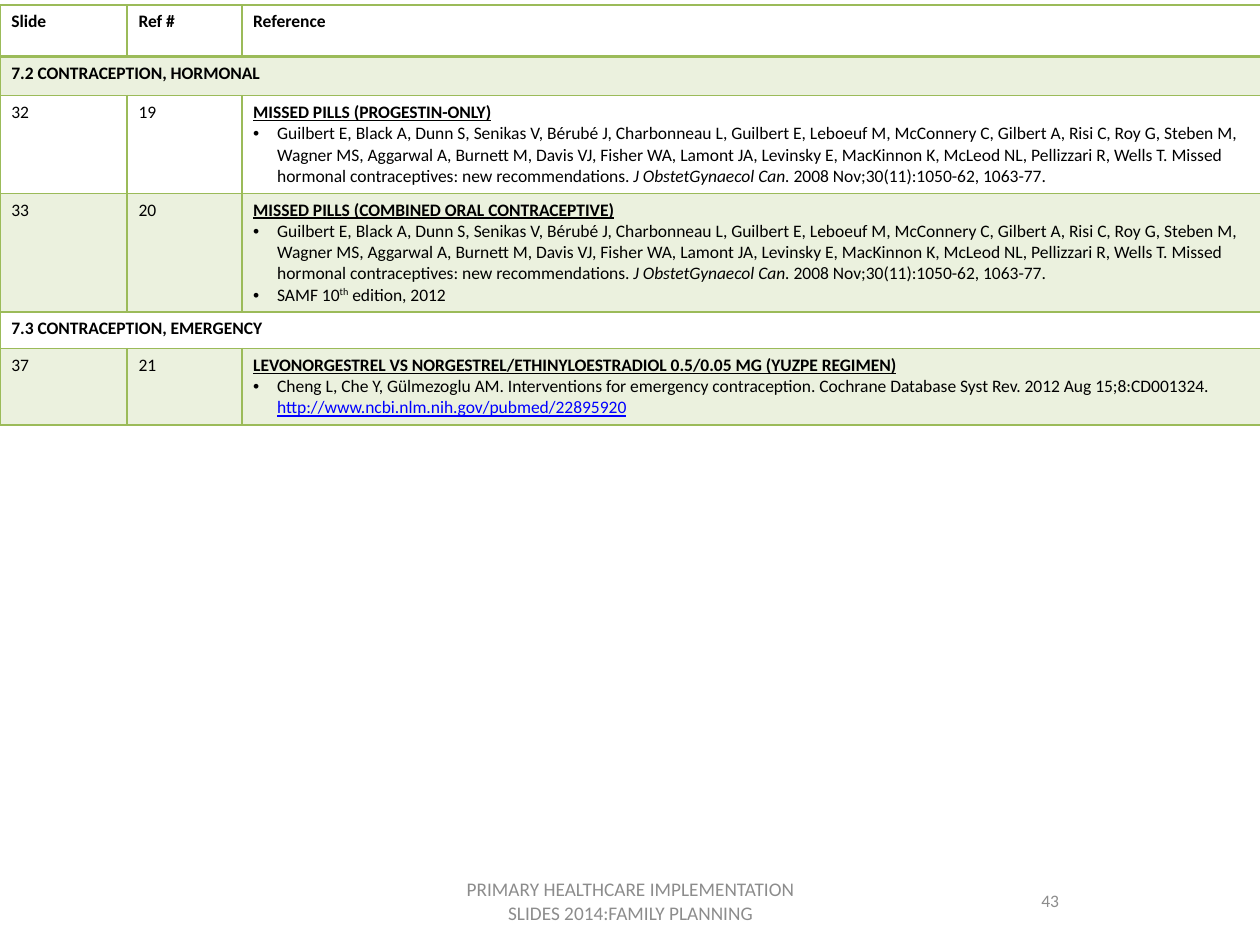
import pptx
import pptx.util
import pptx.dml.color
import pptx.enum.text
import pptx.oxml
import pptx.oxml.ns
import lxml.etree as etree

Inch, Pt = pptx.util.Inches, pptx.util.Pt
qn = pptx.oxml.ns.qn
HUES = {"line": "9BBB59", "band": "EBF1DE", "text": "000000",
        "link": "0000FF", "foot": "8C8C8C"}


def hue(name):
    return pptx.dml.color.RGBColor.from_string(HUES[name])


def write(para, runs, size, color="text"):
    """Fill a paragraph with (text, style) runs."""
    font = para.font
    font.size, font.name, font.color.rgb = Pt(size), "Calibri", hue(color)
    for text, style in runs:
        run = para.add_run()
        run.text = text
        if style in ("bold", "title"):
            run.font.bold = True
        if style in ("title", "link"):
            run.font.underline = True
        if style == "link":
            run.font.color.rgb = hue("link")
        if style == "italic":
            run.font.italic = True
        if style == "super":
            run._r.get_or_add_rPr().set("baseline", "30000")


deck = pptx.Presentation()
deck.slide_width, deck.slide_height = Inch(10), Inch(7.5)
slide = deck.slides.add_slide(deck.slide_layouts[6])

# Content: each cell is a list of paragraphs, each paragraph a list of runs
missed = [
    ("Guilbert E, Black A, Dunn S, Senikas V, Bérubé J, Charbonneau L, "
     "Guilbert E, Leboeuf M, McConnery C, Gilbert A, Risi C, Roy G, Steben M, "
     "Wagner MS, Aggarwal A, Burnett M, Davis VJ, Fisher WA, Lamont JA, "
     "Levinsky E, MacKinnon K, McLeod NL, Pellizzari R, Wells T. Missed "
     "hormonal contraceptives: new recommendations. ", ""),
    ("J ObstetGynaecol Can.", "italic"),
    (" 2008 Nov;30(11):1050-62, 1063-77.", "")]
samf = [("SAMF 10", ""), ("th", "super"), (" edition, 2012", "")]
cheng = [
    ("Cheng L, Che Y, Gülmezoglu AM. Interventions for emergency "
     "contraception. Cochrane Database Syst Rev. 2012 Aug 15;8:CD001324. ", ""),
    ("http://www.ncbi.nlm.nih.gov/pubmed/22895920", "link")]
rows = [
    [[[(word, "bold")]] for word in ("Slide", "Ref #", "Reference")],
    [[[("7.2 CONTRACEPTION, HORMONAL", "bold")]]],
    [[[("32", "")]], [[("19", "")]],
     [[("MISSED PILLS (PROGESTIN-ONLY)", "title")], missed]],
    [[[("33", "")]], [[("20", "")]],
     [[("MISSED PILLS (COMBINED ORAL CONTRACEPTIVE)", "title")], missed, samf]],
    [[[("7.3 CONTRACEPTION, EMERGENCY", "bold")]]],
    [[[("37", "")]], [[("21", "")]],
     [[("LEVONORGESTREL VS NORGESTREL/ETHINYLOESTRADIOL 0.5/0.05 MG "
        "(YUZPE REGIMEN)", "title")], cheng]]]
wide = [1.01, 0.91, 8.09]
high = [0.41, 0.31, 0.41, 0.41, 0.29, 0.41]

# Reference table
table = slide.shapes.add_table(len(rows), len(wide), 0, Inch(0.04),
                               Inch(sum(wide)), Inch(sum(high))).table
table.first_row = table.horz_banding = False
for col, size in zip(table.columns, wide):
    col.width = Inch(size)
for row, size in zip(table.rows, high):
    row.height = Inch(size)

for r, cells in enumerate(rows):
    if len(cells) == 1:
        table.cell(r, 0).merge(table.cell(r, 2))
    for c in range(len(wide)):
        cell = table.cell(r, c)
        # Borders, with a heavier rule under the header
        props = cell._tc.get_or_add_tcPr()
        for side in "LRTB":
            heavy = (r, side) in ((0, "B"), (1, "T"))
            line = etree.SubElement(props, qn("a:ln" + side),
                                    w=str(Pt(2 if heavy else 1)))
            solid = etree.SubElement(line, qn("a:solidFill"))
            etree.SubElement(solid, qn("a:srgbClr"), val=HUES["line"])
        # Banding
        if r % 2:
            cell.fill.solid()
            cell.fill.fore_color.rgb = hue("band")
        else:
            cell.fill.background()
        if c >= len(cells):
            continue
        # Text, with bullets below each reference title
        cell.margin_left = cell.margin_right = Inch(0.09)
        cell.margin_top = cell.margin_bottom = Inch(0.05)
        frame = cell.text_frame
        for n, runs in enumerate(cells[c]):
            para = frame.add_paragraph() if n else frame.paragraphs[0]
            write(para, runs, 10)
            if n:
                form = para._p.get_or_add_pPr()
                form.set("marL", str(Inch(0.19)))
                form.set("indent", str(-Inch(0.19)))
                face = etree.Element(qn("a:buFont"), typeface="Arial")
                dot = etree.Element(qn("a:buChar"), char="•")
                form.insert(0, face)
                form.insert(1, dot)

# Footer and page number
for left, width, text, size in (
        (7.17, 2.33, "43", 10),
        (3.42, 3.17, "PRIMARY HEALTHCARE IMPLEMENTATION "
                     "SLIDES 2014:FAMILY PLANNING", 11)):
    frame = slide.shapes.add_textbox(Inch(left), Inch(6.95), Inch(width),
                                     Inch(0.4)).text_frame
    frame.word_wrap = True
    frame.vertical_anchor = pptx.enum.text.MSO_ANCHOR.MIDDLE
    para = frame.paragraphs[0]
    para.alignment = pptx.enum.text.PP_ALIGN.CENTER
    write(para, [(text, "")], size, "foot")

deck.save("out.pptx")
